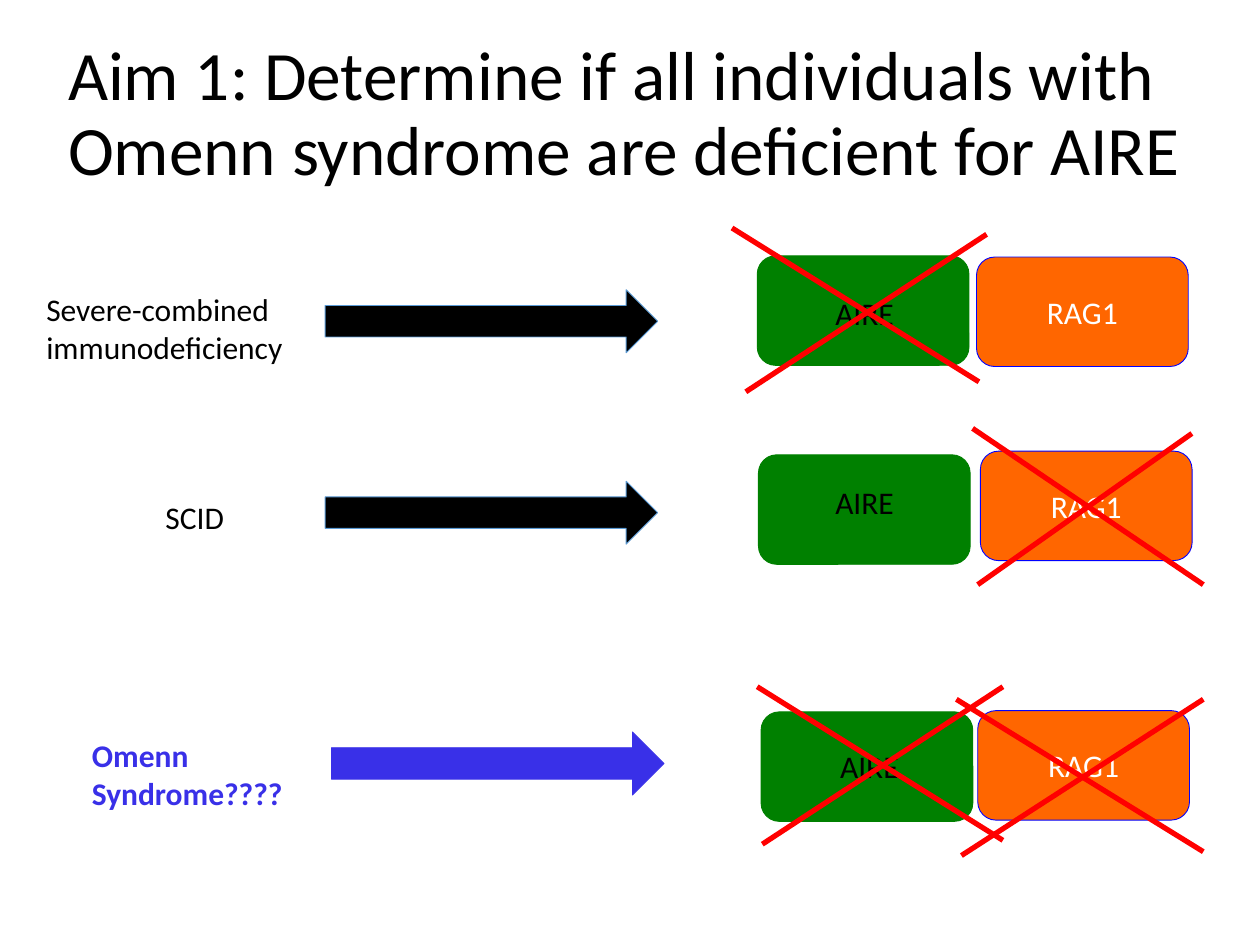
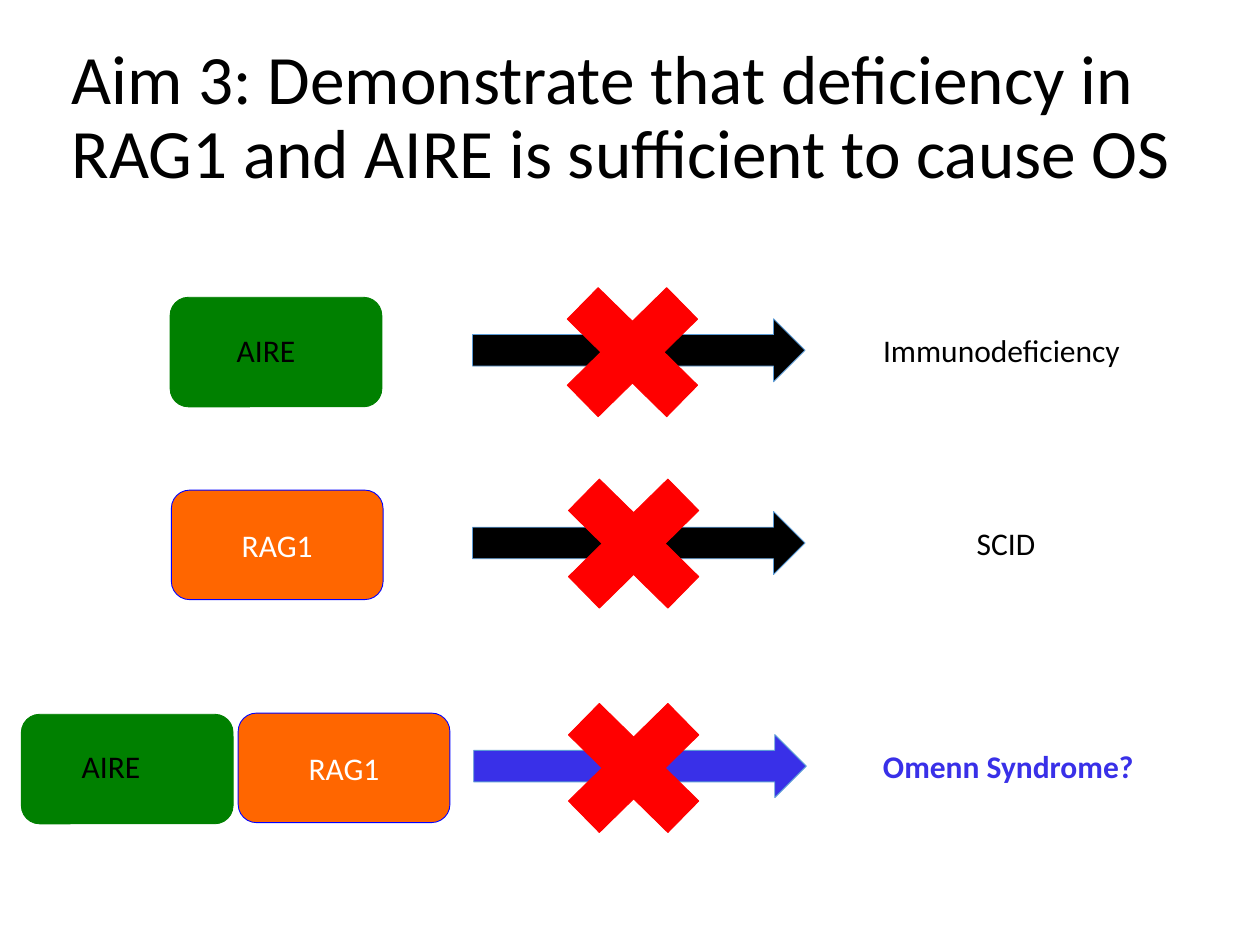
from dataclasses import dataclass

from lxml.etree import SubElement
from pptx import Presentation
from pptx.dml.color import RGBColor
from pptx.enum.shapes import MSO_CONNECTOR, MSO_SHAPE
from pptx.enum.text import MSO_ANCHOR, MSO_AUTO_SIZE, PP_ALIGN
from pptx.oxml.ns import qn
from pptx.shapes.autoshape import Shape
from pptx.slide import Slide
from pptx.text.text import TextFrame
from pptx.util import Pt

FONT = "Calibri"
BLACK, WHITE, RED = "000000", "FFFFFF", "FF0000"
GREEN, ORANGE, BLUE = "008000", "FF6600", "0000FF"
VIOLET, STEEL = "3930E8", "5B9BD5"
GENE_SIZE = (121, 62.6)
ARROW_SIZE = (190, 36)
BLOCK_SIZE = (109.4, 107.3)
LABEL_HEIGHT = 28.8
TITLE_HEIGHT = 104.4


@dataclass(frozen=True)
class Label:
    text: str
    left: float
    top: float
    width: float
    height: float = LABEL_HEIGHT
    color: str = BLACK
    bold: bool = False
    align: PP_ALIGN = PP_ALIGN.LEFT


@dataclass(frozen=True)
class Aire:
    left: float
    top: float
    label: Label


@dataclass(frozen=True)
class Rag1:
    left: float
    top: float


@dataclass(frozen=True)
class Arrow:
    left: float
    top: float
    fill: str = BLACK
    line: str = STEEL


@dataclass(frozen=True)
class Stroke:
    x1: float
    y1: float
    x2: float
    y2: float


@dataclass(frozen=True)
class Block:
    left: float
    top: float


@dataclass(frozen=True)
class Aim:
    title: Label
    diagram: tuple


def rgb(color: str) -> RGBColor:
    return RGBColor.from_string(color)


def format_text(frame: TextFrame, size: float, color: str, align: PP_ALIGN, bold: bool = False) -> None:
    for paragraph in frame.paragraphs:
        paragraph.alignment = align
        for run in paragraph.runs:
            run.font.name = FONT
            run.font.size = Pt(size)
            run.font.bold = bold
            run.font.color.rgb = rgb(color)


def add_title(slide: Slide, label: Label) -> None:
    title = slide.shapes.title
    title.left, title.top = Pt(label.left), Pt(label.top)
    title.width, title.height = Pt(label.width), Pt(label.height)
    frame = title.text_frame
    frame.text = label.text
    frame.auto_size = MSO_AUTO_SIZE.NONE
    frame.vertical_anchor = MSO_ANCHOR.MIDDLE
    frame.paragraphs[0].line_spacing = 0.9
    format_text(frame, 39.6, label.color, label.align)


def add_label(slide: Slide, label: Label) -> None:
    box = slide.shapes.add_textbox(Pt(label.left), Pt(label.top), Pt(label.width), Pt(label.height))
    frame = box.text_frame
    frame.word_wrap = True
    frame.auto_size = MSO_AUTO_SIZE.SHAPE_TO_FIT_TEXT
    frame.text = label.text
    format_text(frame, 18, label.color, label.align, label.bold)


def add_figure(slide: Slide, kind: MSO_SHAPE, left: float, top: float,
               size: tuple[float, float], fill: str, line: str) -> Shape:
    width, height = size
    figure = slide.shapes.add_shape(kind, Pt(left), Pt(top), Pt(width), Pt(height))
    figure.shadow.inherit = False
    figure.fill.solid()
    figure.fill.fore_color.rgb = rgb(fill)
    figure.line.color.rgb = rgb(line)
    figure.line.width = Pt(0.5)
    return figure


def add_aire(slide: Slide, gene: Aire) -> None:
    add_figure(slide, MSO_SHAPE.ROUNDED_RECTANGLE, gene.left, gene.top, GENE_SIZE, GREEN, GREEN)
    add_label(slide, gene.label)


def add_rag1(slide: Slide, gene: Rag1) -> None:
    figure = add_figure(slide, MSO_SHAPE.ROUNDED_RECTANGLE, gene.left, gene.top, GENE_SIZE, ORANGE, BLUE)
    figure.text_frame.text = "RAG1"
    figure.text_frame.vertical_anchor = MSO_ANCHOR.MIDDLE
    format_text(figure.text_frame, 18, WHITE, PP_ALIGN.CENTER)


def add_arrow(slide: Slide, arrow: Arrow) -> None:
    add_figure(slide, MSO_SHAPE.RIGHT_ARROW, arrow.left, arrow.top, ARROW_SIZE, arrow.fill, arrow.line)


def add_block(slide: Slide, block: Block) -> None:
    add_figure(slide, MSO_SHAPE.MATH_MULTIPLY, block.left, block.top, BLOCK_SIZE, RED, RED)


def add_stroke(slide: Slide, stroke: Stroke) -> None:
    line = slide.shapes.add_connector(
        MSO_CONNECTOR.STRAIGHT, Pt(stroke.x1), Pt(stroke.y1), Pt(stroke.x2), Pt(stroke.y2))
    line.line.color.rgb = rgb(RED)
    line.line.width = Pt(3)
    SubElement(line._element.spPr, qn("a:effectLst"))


DRAW = {Label: add_label, Aire: add_aire, Rag1: add_rag1,
        Arrow: add_arrow, Block: add_block, Stroke: add_stroke}

AIMS = (
    Aim(
        Label("Aim 1: Determine if all individuals with Omenn syndrome are deficient for AIRE",
              31.7, 13.7, 663.8, TITLE_HEIGHT),
        (
            Label("Severe-combined immunodeficiency", 19.4, 162, 170.6, 51.1),
            Arrow(185.8, 165.6),
            Aire(432.7, 146.2, Label("AIRE", 470.2, 164.2, 59)),
            Stroke(418.3, 130.3, 559.4, 218.2),
            Stroke(563.8, 133.9, 426.2, 223.9),
            Rag1(558, 146.9),
            Label("SCID", 49, 280.8, 124.6, align=PP_ALIGN.CENTER),
            Arrow(185.8, 275),
            Aire(433.4, 259.9, Label("AIRE", 470.2, 272.2, 59)),
            Rag1(560.2, 257.8),
            Stroke(555.8, 244.8, 687.6, 334.1),
            Stroke(681.1, 247.7, 558.7, 334.1),
            Label("Omenn Syndrome????", 45.4, 416.9, 140.4, 51.1, VIOLET, True),
            Arrow(189.4, 418.3, VIOLET, VIOLET),
            Aire(434.9, 406.8, Label("AIRE", 473, 423.4, 75.6)),
            Rag1(558.7, 406.1),
            Stroke(432.7, 392.4, 573.1, 480.2),
            Stroke(573.1, 392.4, 435.6, 482.4),
            Stroke(546.5, 399.6, 687.6, 486.7),
            Stroke(687.6, 399.6, 549.4, 488.9),
        ),
    ),
    Aim(
        Label("Aim 3: Demonstrate that deficiency in RAG1 and AIRE is sufficient to cause OS",
              33.8, 15.8, 655.9, TITLE_HEIGHT),
        (
            Aire(97.2, 169.9, Label("AIRE", 128.2, 185.8, 50.4)),
            Arrow(270, 182.2),
            Block(306.7, 147.6),
            Label("Immunodeficiency", 497.5, 185.8, 154.8),
            Rag1(97.9, 280.1),
            Arrow(270, 292.3),
            Block(307.4, 257),
            Label("SCID", 512.6, 295.9, 124.6, align=PP_ALIGN.CENTER),
            Aire(12.2, 408.2, Label("AIRE", 39.6, 423.4, 52.6)),
            Rag1(136.1, 407.5),
            Arrow(270.7, 419.8, VIOLET),
            Block(307.4, 385.2),
            Label("Omenn Syndrome?", 497.5, 423.4, 192.2, color=VIOLET, bold=True),
        ),
    ),
)


def main() -> None:
    deck = Presentation()
    deck.slide_width, deck.slide_height = Pt(720), Pt(540)
    for aim in AIMS:
        slide = deck.slides.add_slide(deck.slide_layouts[5])
        add_title(slide, aim.title)
        for element in aim.diagram:
            DRAW[type(element)](slide, element)
    deck.save("out.pptx")


if __name__ == "__main__":
    main()
